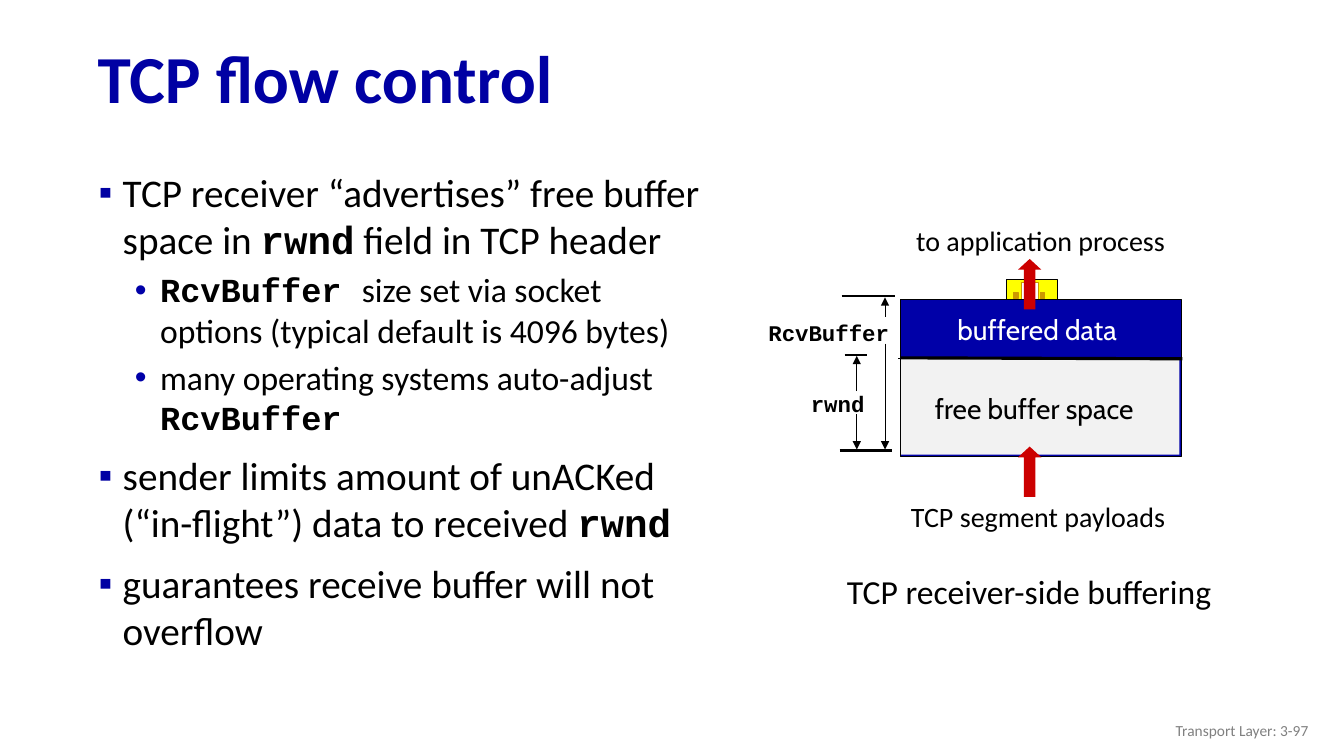
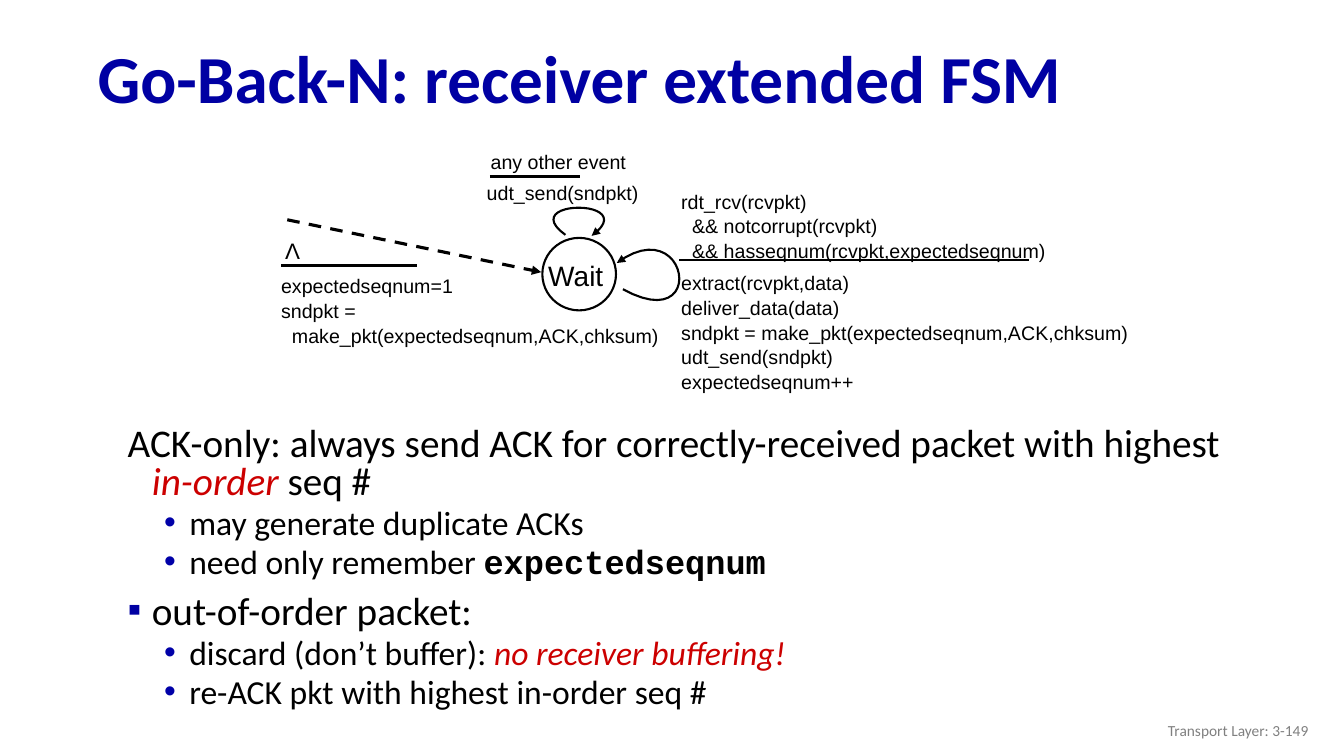
"""Build two transport-layer slides: TCP flow control and the Go-Back-N receiver."""
from dataclasses import dataclass

import pptx
import pptx.dml.color
import pptx.enum.dml
import pptx.enum.shapes
import pptx.enum.text
import pptx.oxml
import pptx.oxml.ns
import pptx.util
from lxml import etree

Pt = pptx.util.Pt
SHAPES = pptx.enum.shapes.MSO_SHAPE
ALIGN = pptx.enum.text.PP_ALIGN
ANCHOR = pptx.enum.text.MSO_ANCHOR


@dataclass(frozen=True)
class Theme:
    navy: str = "0000A3"
    blue: str = "0000A8"
    red: str = "CC0000"
    black: str = "000000"
    white: str = "FFFFFF"
    gray: str = "808080"
    pale: str = "F2F2F2"
    yellow: str = "FFFF00"
    ochre: str = "CC9900"
    body_font: str = "Calibri"
    code_font: str = "Courier New"
    fsm_font: str = "Arial"
    buffer_font: str = "Cabin"
    title_size: int = 48
    main_size: int = 28
    sub_size: int = 24
    label_size: int = 20
    code_size: int = 16
    fsm_size: int = 14
    footer_size: int = 11


THEME = Theme()


def code(text):
    return text, {"font": THEME.code_font, "bold": True}


def stress(text):
    return text, {"color": THEME.red, "italic": True}


class Deck:
    def __init__(self):
        self.presentation = pptx.Presentation()
        self.presentation.slide_width = Pt(960)
        self.presentation.slide_height = Pt(540)
        self.slide = None

    def start(self, title, page):
        self.slide = self.presentation.slides.add_slide(self.presentation.slide_layouts[6])
        self.text((62.6, 23, 880, 70.6), [title], size=THEME.title_size, bold=True,
                  color=THEME.navy, anchor=ANCHOR.MIDDLE, spacing=0.9)
        self.text((725.8, 507.6, 216, 28.8), [f"Transport Layer: {page}"],
                  size=THEME.footer_size, color=THEME.gray, align=ALIGN.RIGHT,
                  anchor=ANCHOR.MIDDLE)

    def frame(self, box, wrap=True, anchor=ANCHOR.TOP):
        frame = self.slide.shapes.add_textbox(*map(Pt, box)).text_frame
        frame.word_wrap = wrap
        frame.vertical_anchor = anchor
        return frame

    def paragraphs(self, frame, items):
        for index, item in enumerate(items):
            yield (frame.add_paragraph() if index else frame.paragraphs[0]), item

    def run(self, paragraph, text, size, font=THEME.body_font, color=THEME.black,
            bold=False, italic=False):
        run = paragraph.add_run()
        run.text = text
        run.font.size = Pt(size)
        run.font.name = font
        run.font.bold = bold
        run.font.italic = italic
        run.font.color.rgb = pptx.dml.color.RGBColor.from_string(color)

    def text(self, box, lines, size=THEME.label_size, align=ALIGN.LEFT,
             anchor=ANCHOR.TOP, wrap=True, spacing=None, **look):
        frame = self.frame(box, wrap, anchor)
        for paragraph, line in self.paragraphs(frame, lines):
            paragraph.alignment = align
            paragraph.line_spacing = spacing
            self.run(paragraph, line, size, **look)

    def label(self, box, words, align=ALIGN.CENTER, **look):
        self.text(box, [words], align=align, wrap=False, **look)

    def fsm(self, box, *lines):
        self.text(box, lines, size=THEME.fsm_size, font=THEME.fsm_font, spacing=1.05)

    def outline(self, box, items, spacing=None):
        levels = {
            0: (28, -17.3, 10, THEME.main_size, "▪", THEME.navy),
            1: (54.7, -18, 5, THEME.sub_size, "•", THEME.blue),
        }
        for paragraph, (level, bulleted, *parts) in self.paragraphs(self.frame(box), items):
            margin, indent, before, size, mark, color = levels[level]
            paragraph.level = level
            paragraph.line_spacing = spacing
            paragraph.space_before = Pt(0 if parts is items[0] or paragraph._p.getprevious().tag
                                        == pptx.oxml.ns.qn("a:lstStyle") else before)
            props = paragraph._p.get_or_add_pPr()
            props.set("marL", str(Pt(margin)))
            props.set("indent", str(Pt(indent)))
            if bulleted:
                tint = etree.SubElement(props, pptx.oxml.ns.qn("a:buClr"))
                etree.SubElement(tint, pptx.oxml.ns.qn("a:srgbClr"), val=color)
                etree.SubElement(props, pptx.oxml.ns.qn("a:buFont"), typeface=THEME.fsm_font)
                etree.SubElement(props, pptx.oxml.ns.qn("a:buChar"), char=mark)
            else:
                etree.SubElement(props, pptx.oxml.ns.qn("a:buNone"))
            for part in parts:
                words, look = (part, {}) if isinstance(part, str) else part
                self.run(paragraph, words, size, **look)

    def shape(self, kind, box, fill, line=None, width=0.75):
        shape = self.slide.shapes.add_shape(kind, *map(Pt, box))
        shape.shadow.inherit = False
        shape.fill.solid()
        shape.fill.fore_color.rgb = pptx.dml.color.RGBColor.from_string(fill)
        if line:
            self.stroke(shape, width, color=line)
        else:
            shape.line.fill.background()
        return shape

    def stroke(self, shape, width, arrow=False, dashed=False, color=THEME.black):
        shape.line.width = Pt(width)
        shape.line.color.rgb = pptx.dml.color.RGBColor.from_string(color)
        if dashed:
            shape.line.dash_style = pptx.enum.dml.MSO_LINE.DASH
        if arrow:
            etree.SubElement(shape.line._get_or_add_ln(), pptx.oxml.ns.qn("a:tailEnd"),
                             type="triangle")

    def line(self, start, end, width=0.75, **look):
        line = self.slide.shapes.add_connector(
            pptx.enum.shapes.MSO_CONNECTOR.STRAIGHT, *map(Pt, (*start, *end)))
        self.stroke(line, width, **look)
        etree.SubElement(line._element.spPr, pptx.oxml.ns.qn("a:effectLst"))

    def loop(self, *controls, steps=24):
        def point(t):
            weights = ((1 - t) ** 3, 3 * t * (1 - t) ** 2, 3 * t * t * (1 - t), t ** 3)
            return tuple(Pt(sum(w * c[axis] for w, c in zip(weights, controls)))
                         for axis in (0, 1))

        points = [point(step / steps) for step in range(steps + 1)]
        builder = self.slide.shapes.build_freeform(*points[0])
        builder.add_line_segments(points[1:], close=False)
        curve = builder.convert_to_shape()
        curve.shadow.inherit = False
        curve.fill.background()
        self.stroke(curve, 1.5, arrow=True)


def flow_control(deck):
    deck.start("TCP flow control", "3-97")
    deck.outline((52.6, 116.6, 458.6, 386.6), [
        (0, True, "TCP receiver “advertises” free buffer space in ", code("rwnd"),
         " field in TCP header"),
        (1, True, code("RcvBuffer "),
         "size set via socket options (typical default is 4096 bytes)"),
        (1, True, "many operating systems auto-adjust ", code("RcvBuffer")),
        (0, True, "sender limits amount of unACKed (“in-flight”) data to received ",
         code("rwnd")),
        (0, True, "guarantees receive buffer will not overflow"),
    ])
    deck.shape(SHAPES.RECTANGLE, (719.3, 199.4, 36, 16.6), THEME.yellow, THEME.black)
    deck.shape(SHAPES.RECTANGLE, (730, 201.6, 11.5, 12.2), THEME.white, THEME.ochre)
    for post_left in (743, 724.3):
        deck.shape(SHAPES.RECTANGLE, (post_left, 208.8, 2.9, 4.3), THEME.ochre, THEME.ochre)
    deck.shape(SHAPES.RECTANGLE, (643, 213.8, 200.9, 112.3), THEME.blue, THEME.black)
    deck.shape(SHAPES.RECTANGLE, (643.7, 255.6, 198.7, 69.1), THEME.pale)
    for arrow_top in (185, 319):
        arrow = deck.shape(SHAPES.UP_ARROW, (727.2, arrow_top, 16.6, 36), THEME.red)
        arrow.adjustments[0] = 0.5
        arrow.adjustments[1] = 0.46
    deck.line((641.5, 256.3), (844.6, 256.3))
    deck.line((643, 255.6), (844.6, 256.3), 2.25)
    deck.label((673.9, 219.6, 133.9, 31), "buffered data",
               font=THEME.buffer_font, color=THEME.white)
    deck.label((656.6, 275.8, 164.2, 31), "free buffer space", font=THEME.buffer_font)

    for left, right, level in ((599.8, 637.2, 321.8), (603.4, 619.2, 253.4),
                               (601.2, 639.4, 211.7)):
        deck.line((left, level), (right, level), 1.5)
    for x, start, end in ((612, 279.4, 254.2), (612, 295.9, 321.1),
                          (632.2, 226.1, 212.4), (632.2, 245.5, 321.1)):
        deck.line((x, start), (x, end), arrow=True)
    deck.label((571.7, 275, 53.3, 26.6), "rwnd", size=THEME.code_size,
               font=THEME.code_font, bold=True)
    deck.label((541.4, 224.6, 100.8, 26.6), "RcvBuffer", ALIGN.RIGHT, size=THEME.code_size,
               font=THEME.code_font, bold=True)
    deck.label((642.2, 353.5, 198.7, 31.7), "TCP segment payloads")
    deck.label((645.8, 156.2, 195.1, 31.7), "to application process")
    deck.label((594.7, 404.6, 280.8, 36), "TCP receiver-side buffering", size=THEME.sub_size)


def receiver_fsm(deck):
    deck.start("Go-Back-N: receiver extended FSM", "3-149")
    deck.shape(SHAPES.OVAL, (387.4, 169.9, 52.6, 51.8), THEME.white, THEME.black, 1.5)
    deck.text((384.5, 181.4, 63.4, 26.6), ["Wait"], font=THEME.fsm_font)

    deck.line((205.2, 157), (386.6, 194.4), 2.25, arrow=True, dashed=True)
    deck.label((196.6, 165.6, 25.2, 26.6), "Λ", ALIGN.LEFT, size=THEME.code_size,
               font=THEME.fsm_font)
    deck.line((200.9, 189.4), (298.1, 189.4), 2.25)
    deck.fsm((193.7, 191.5, 286.6, 77), "expectedseqnum=1", "sndpkt =",
             "  make_pkt(expectedseqnum,ACK,chksum)")

    deck.loop((403.9, 167.8), (367.9, 141.8), (459.4, 141.8), (422.6, 168.5))
    deck.fsm((343.4, 103, 131, 19.4), "any other event")
    deck.line((349.9, 126), (414, 126), 2.25)
    deck.fsm((340.6, 124.6, 127.4, 24.5), "udt_send(sndpkt)")

    deck.loop((445, 206.6), (506.2, 240.5), (491.8, 149.8), (440.6, 187.9))
    deck.fsm((479.5, 131, 280.8, 44.6), "rdt_rcv(rcvpkt)", "  && notcorrupt(rcvpkt)",
             "  && hasseqnum(rcvpkt,expectedseqnum)")
    deck.line((485.3, 185.8), (735.1, 185.8), 1.5)
    deck.fsm((479.5, 189.4, 339.8, 67.7), "extract(rcvpkt,data)", "deliver_data(data)",
             "sndpkt = make_pkt(expectedseqnum,ACK,chksum)", "udt_send(sndpkt)",
             "expectedseqnum++")

    deck.outline((73.4, 301.7, 812.2, 224.6), [
        (0, False, "ACK-only: always send ACK for correctly-received packet with highest ",
         stress("in-order"), " seq #"),
        (1, True, "may generate duplicate ACKs"),
        (1, True, "need only remember ", code("expectedseqnum")),
        (0, True, "out-of-order packet:"),
        (1, True, "discard (don’t buffer): ", stress("no receiver buffering!")),
        (1, True, "re-ACK pkt with highest in-order seq #"),
    ], spacing=0.8)


def main():
    deck = Deck()
    flow_control(deck)
    receiver_fsm(deck)
    deck.presentation.save("out.pptx")


if __name__ == "__main__":
    main()
